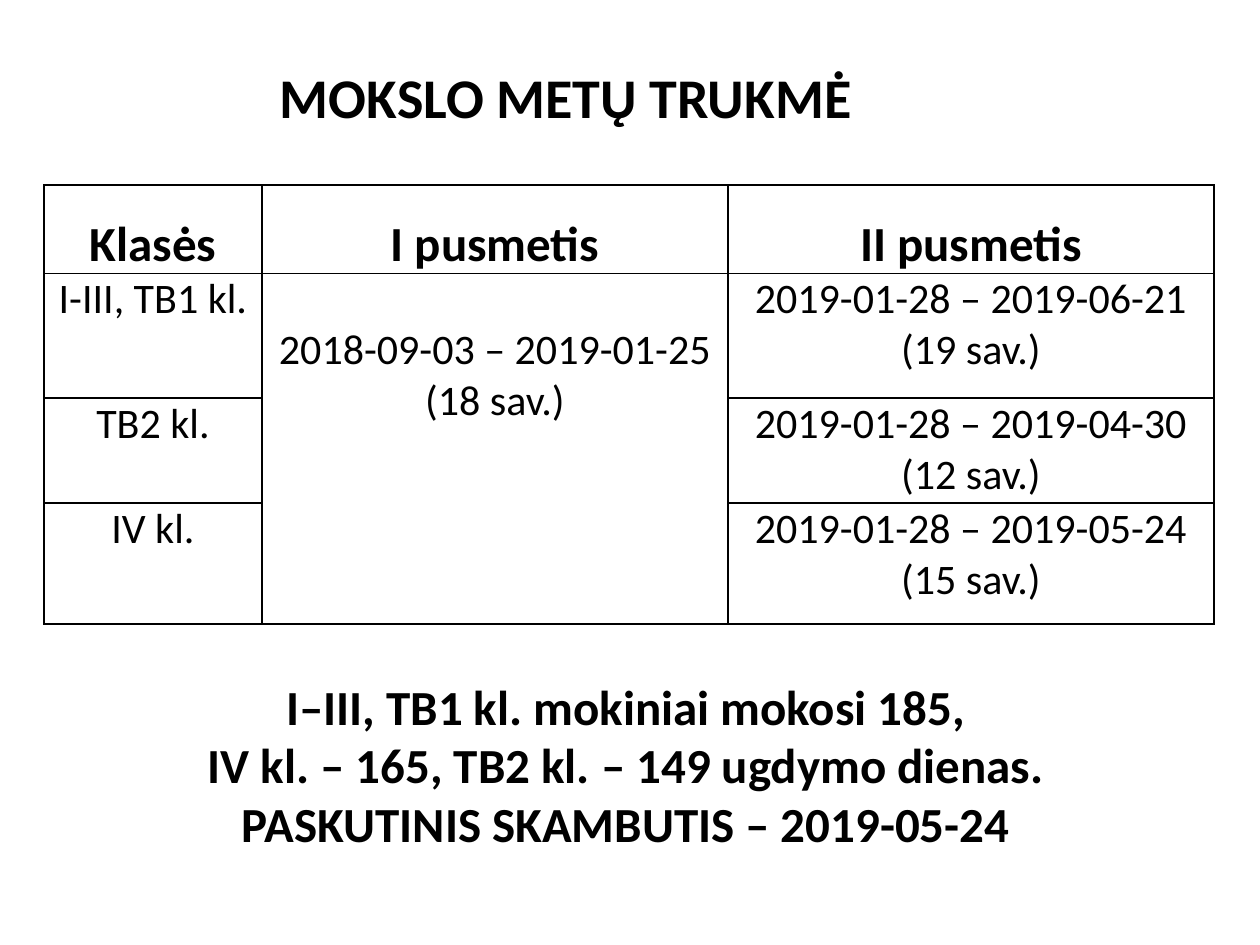
from lxml.etree import SubElement
from pptx import Presentation
from pptx.dml.color import RGBColor
from pptx.enum.text import MSO_ANCHOR as Anchor, PP_ALIGN as Align
from pptx.oxml.ns import qn
from pptx.util import Emu, Pt

EMU_PER_PX = 914400 / 126
COLORS = {"ink": "000000", "paper": "FFFFFF"}
FONTS = {
    "title": {"size": Pt(32), "bold": True},
    "strong": {"size": Pt(28), "bold": True},
    "body": {"size": Pt(24), "bold": False},
}
COLUMNS = [218, 466, 486]
ROWS = [63, 125, 105, 121]
CELLS = [
    ["Klasės", "I pusmetis", "II pusmetis"],
    ["I-III, TB1 kl.", "2018-09-03 – 2019-01-25 (18 sav.)",
     "2019-01-28 – 2019-06-21 (19 sav.)"],
    ["TB2 kl.", None, "2019-01-28 – 2019-04-30 (12 sav.)"],
    ["IV kl.", None, "2019-01-28 – 2019-05-24 (15 sav.)"],
]
SUMMARY = [
    "I–III, TB1 kl. mokiniai mokosi 185,",
    "IV kl. – 165, TB2 kl. – 149 ugdymo dienas.",
    "PASKUTINIS SKAMBUTIS – 2019-05-24",
]


def px(value):
    return Emu(round(value * EMU_PER_PX))


def color(name):
    return RGBColor.from_string(COLORS[name])


def set_all(target, values):
    for name, value in values.items():
        setattr(target, name, value)


def write(frame, lines, font, spacing=1.0):
    """Fill a text frame with centred paragraphs."""
    frame.word_wrap = True
    for index, line in enumerate(lines):
        para = frame.add_paragraph() if index else frame.paragraphs[0]
        set_all(para, {"alignment": Align.CENTER, "line_spacing": spacing})
        span = para.add_run()
        span.text = line
        set_all(span.font, {"name": "Calibri", **FONTS[font]})
        span.font.color.rgb = color("ink")


def add_text(page, bounds, lines, font, anchor):
    box = page.shapes.add_textbox(*map(px, bounds))
    box.text_frame.vertical_anchor = anchor
    write(box.text_frame, lines, font)


def style_cell(cell):
    """Thin border on every side, plain fill, narrow margins."""
    props = cell._tc.get_or_add_tcPr()
    for side in ("lnL", "lnR", "lnT", "lnB"):
        line = SubElement(props, qn(f"a:{side}"), w=str(Pt(1)))
        fill = SubElement(line, qn("a:solidFill"))
        SubElement(fill, qn("a:srgbClr"), val=COLORS["ink"])
    cell.fill.solid()
    cell.fill.fore_color.rgb = color("paper")
    set_all(cell, {"margin_left": px(9), "margin_right": px(9),
                   "margin_top": 0, "margin_bottom": 0})


def add_schedule(page, left, top):
    frame = page.shapes.add_table(len(ROWS), len(COLUMNS), px(left), px(top),
                                  px(sum(COLUMNS)), px(sum(ROWS)))
    table = frame.table
    set_all(table, {"first_row": False, "horz_banding": False})
    for column, width in zip(table.columns, COLUMNS):
        column.width = px(width)
    for row, height in zip(table.rows, ROWS):
        row.height = px(height)

    for r, texts in enumerate(CELLS):
        for c, text in enumerate(texts):
            cell = table.cell(r, c)
            style_cell(cell)
            if text:
                font, spacing = ("body", 1.0) if r else ("strong", 1.5)
                write(cell.text_frame, [text], font, spacing)

    # The first term is shared by all classes and starts one line lower
    shared = table.cell(1, 1)
    shared.merge(table.cell(3, 1))
    shared.margin_top = px(51)


def main():
    deck = Presentation()
    set_all(deck, {"slide_width": px(1260), "slide_height": px(945)})
    page = deck.slides.add_slide(deck.slide_layouts[6])

    # Title, schedule, summary
    add_text(page, (105, 38, 922, 117), ["MOKSLO METŲ TRUKMĖ"], "title", Anchor.MIDDLE)
    add_schedule(page, 44, 185)
    add_text(page, (174, 670, 903, 251), SUMMARY, "strong", Anchor.TOP)

    deck.save("out.pptx")


if __name__ == "__main__":
    main()
